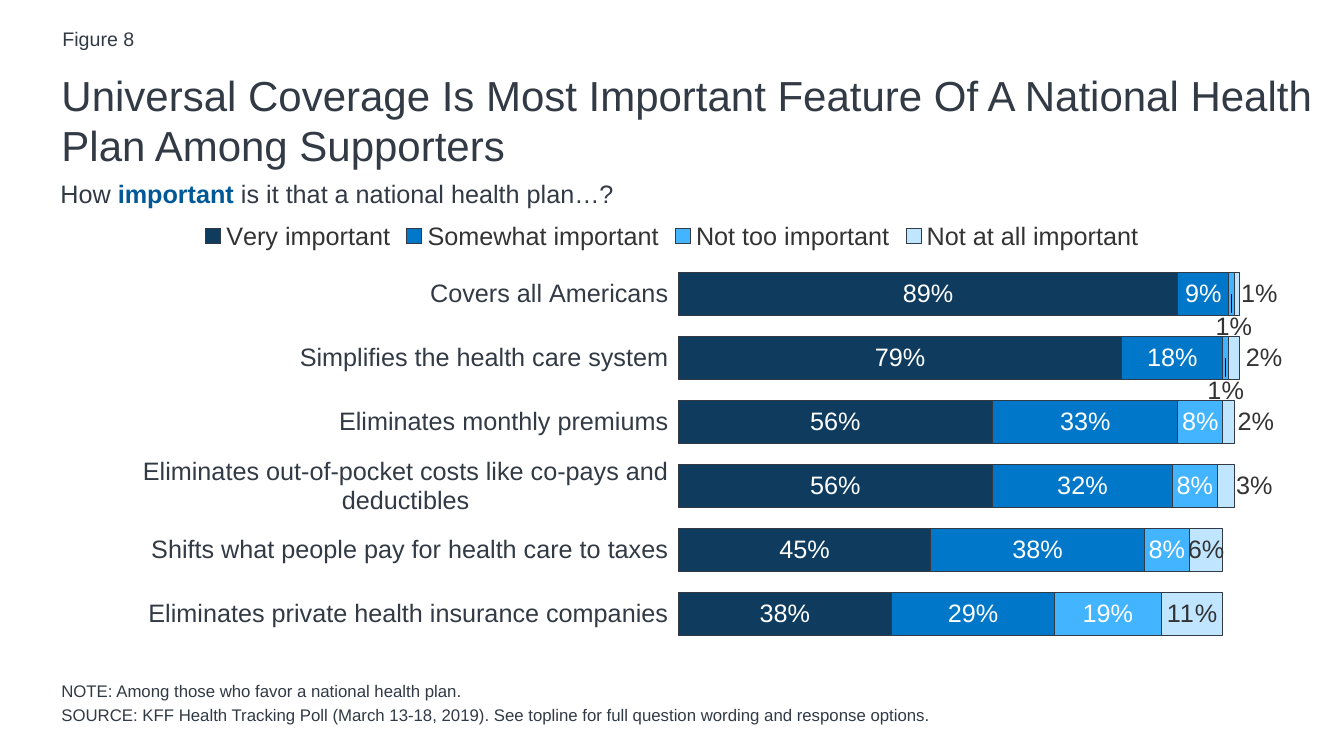
from lxml import etree
from pptx import Presentation
from pptx.chart.data import CategoryChartData
from pptx.dml.color import RGBColor
from pptx.enum.chart import XL_CHART_TYPE, XL_LABEL_POSITION, XL_LEGEND_POSITION
from pptx.enum.text import MSO_ANCHOR, PP_ALIGN
from pptx.oxml.ns import qn
from pptx.util import Inches, Pt

STACKED_BARS = XL_CHART_TYPE.BAR_STACKED
CENTER = XL_LABEL_POSITION.CENTER
LEGEND_TOP = XL_LEGEND_POSITION.TOP
TOP, BOTTOM = MSO_ANCHOR.TOP, MSO_ANCHOR.BOTTOM
LEFT = PP_ALIGN.LEFT

# Content
FONT = "Arial"
DARK, GRAY, WHITE, ACCENT = "323A45", "333333", "FFFFFF", "005996"
FIGURE = "Figure 8"
TITLE = "Universal Coverage Is Most Important Feature Of A National Health Plan Among Supporters"
QUESTION = [("How ", DARK, False), ("important", ACCENT, True),
            (" is it that a national health plan…?", DARK, False)]
NOTES = [
    "NOTE: Among those who favor a national health plan.",
    "SOURCE: KFF Health Tracking Poll (March 13-18, 2019). "
    "See topline for full question wording and response options.",
]
FEATURES = [
    "Covers all Americans",
    "Simplifies the health care system",
    "Eliminates monthly premiums",
    "Eliminates out-of-pocket costs like co-pays and deductibles",
    "Shifts what people pay for health care to taxes",
    "Eliminates private health insurance companies",
]
# Name, fill, label colour, values, label shifts by row (shares of the chart)
ANSWERS = [
    ("Very important", "0E3B5E", WHITE, (0.89, 0.79, 0.56, 0.56, 0.45, 0.38), {}),
    ("Somewhat important", "0077C8", WHITE, (0.09, 0.18, 0.33, 0.32, 0.38, 0.29), {}),
    ("Not too important", "43B4FF", WHITE, (0.01, 0.01, 0.08, 0.08, 0.08, 0.19),
     {0: (0.002, 0.072), 1: (0, 0.072)}),
    ("Not at all important", "C0E6FF", GRAY, (0.01, 0.02, 0.02, 0.03, 0.06, 0.11),
     {0: (0.018, 0), 1: (0.024, 0), 2: (0.022, 0), 3: (0.023, 0)}),
]
PLOT = {"layoutTarget": "inner", "xMode": "edge", "yMode": "edge",
        "x": 0.505, "y": 0.116, "w": 0.451, "h": 0.848}


def color(value):
    return RGBColor.from_string(value)


def style(font, size, value, bold=False):
    font.name, font.size, font.bold = FONT, Pt(size), bold
    font.color.rgb = color(value)


def set_frame(shape, anchor=TOP):
    frame = shape.text_frame
    frame.word_wrap = True
    frame.vertical_anchor = anchor
    return frame


def add_text_box(left, top, width, height, anchor=TOP):
    box = slide.shapes.add_textbox(*map(Inches, (left, top, width, height)))
    return set_frame(box, anchor)


def place(parent, index, settings):
    """Give a chart part a manual layout."""
    for old in parent.findall(qn("c:layout")):
        parent.remove(old)
    layout = etree.Element(qn("c:layout"))
    manual = etree.SubElement(layout, qn("c:manualLayout"))
    for name, value in settings.items():
        etree.SubElement(manual, qn("c:" + name)).set("val", str(value))
    parent.insert(index, layout)


presentation = Presentation()
presentation.slide_width, presentation.slide_height = Inches(13.33), Inches(7.5)
slide = presentation.slides.add_slide(presentation.slide_layouts[5])

# Title
title = slide.shapes.title
title.left, title.top, title.width, title.height = map(Inches, (0.51, 0.64, 12.7, 1))
frame = set_frame(title)
frame.text = TITLE
frame.paragraphs[0].alignment = LEFT
style(frame.paragraphs[0].runs[0].font, 30, DARK)

# Figure number
frame = add_text_box(0.52, 0.22, 3.11, 0.4)
frame.text = FIGURE
style(frame.paragraphs[0].runs[0].font, 14, DARK)

# Question
frame = add_text_box(0.5, 1.72, 11.91, 0.4)
for words, value, bold in QUESTION:
    run = frame.paragraphs[0].add_run()
    run.text = words
    style(run.font, 18, value, bold)

# Notes
frame = add_text_box(0.51, 6.49, 10.65, 0.75, BOTTOM)
frame.text = "\n".join(NOTES)
for number, paragraph in enumerate(frame.paragraphs):
    paragraph.space_before = Pt(3 if number else 0)
    style(paragraph.runs[0].font, 12, DARK)

# Chart
data = CategoryChartData(number_format="0%")
data.categories = FEATURES
for name, _, _, values, _ in ANSWERS:
    data.add_series(name, values)
chart = slide.shapes.add_chart(
    STACKED_BARS, *map(Inches, (0.49, 2.08, 12.35, 4.49)), data).chart
chart.has_title = False
style(chart.font, 18, GRAY)
chart.has_legend = True
chart.legend.position = LEGEND_TOP
chart.legend.include_in_layout = False
style(chart.legend.font, 18, GRAY)

# Axes
features_axis, share_axis = chart.category_axis, chart.value_axis
features_axis.reverse_order = True
features_axis.format.line.fill.background()
style(features_axis.tick_labels.font, 18, DARK)
share_axis.minimum_scale, share_axis.maximum_scale, share_axis.major_unit = 0, 1, 0.1
share_axis.has_major_gridlines = False
share_axis.visible = False

# Bars and their labels
plot = chart.plots[0]
plot.gap_width, plot.overlap = 50, 100
plot.vary_by_categories = False
for series, (_, fill, label_color, _, shifts) in zip(plot.series, ANSWERS):
    series.format.fill.solid()
    series.format.fill.fore_color.rgb = color(fill)
    series.format.line.color.rgb = color(DARK)
    series.format.line.width = Pt(0.75)
    labels = series.data_labels
    labels.show_value = True
    labels.number_format, labels.number_format_is_linked = "0%", False
    labels.position = CENTER
    style(labels.font, 18, label_color)
    for row, (across, down) in shifts.items():
        label = series.points[row].data_label
        style(label.font, 18, GRAY)
        label.position = CENTER
        element = next(item for item in series.data_labels._element.findall(qn("c:dLbl"))
                       if item.find(qn("c:idx")).get("val") == str(row))
        place(element, 1, {"x": across, "y": down})

place(chart._chartSpace.chart.plotArea, 0, PLOT)

presentation.save("out.pptx")
